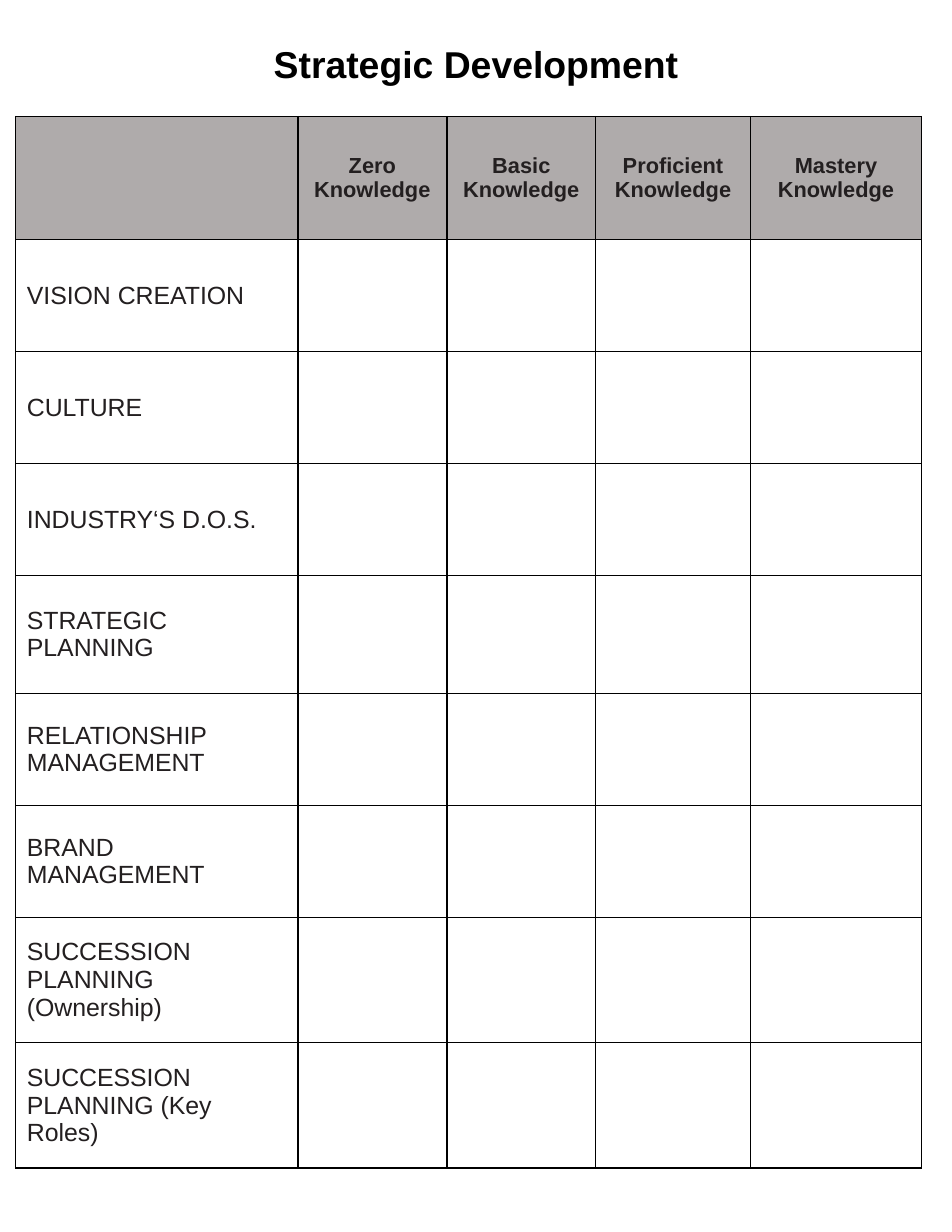
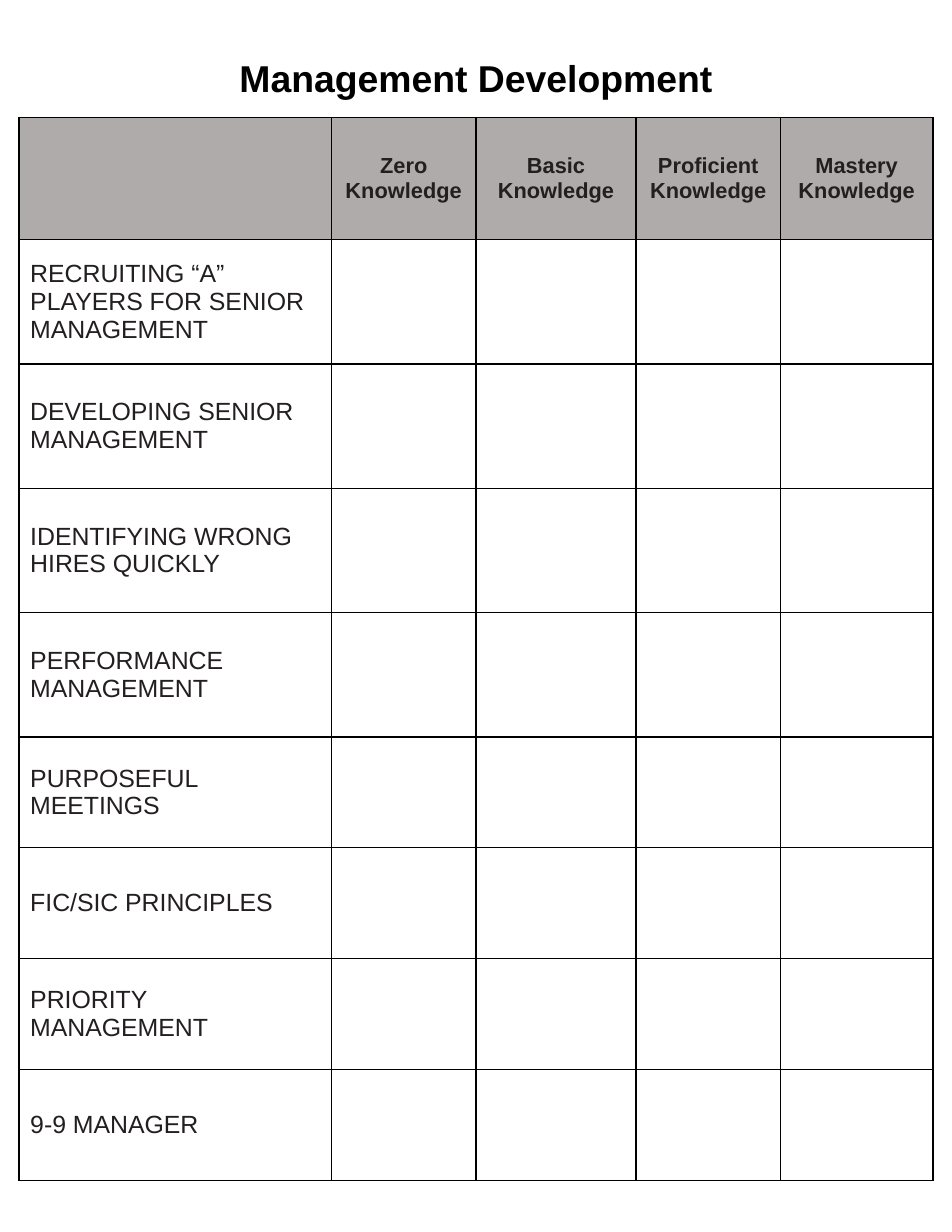
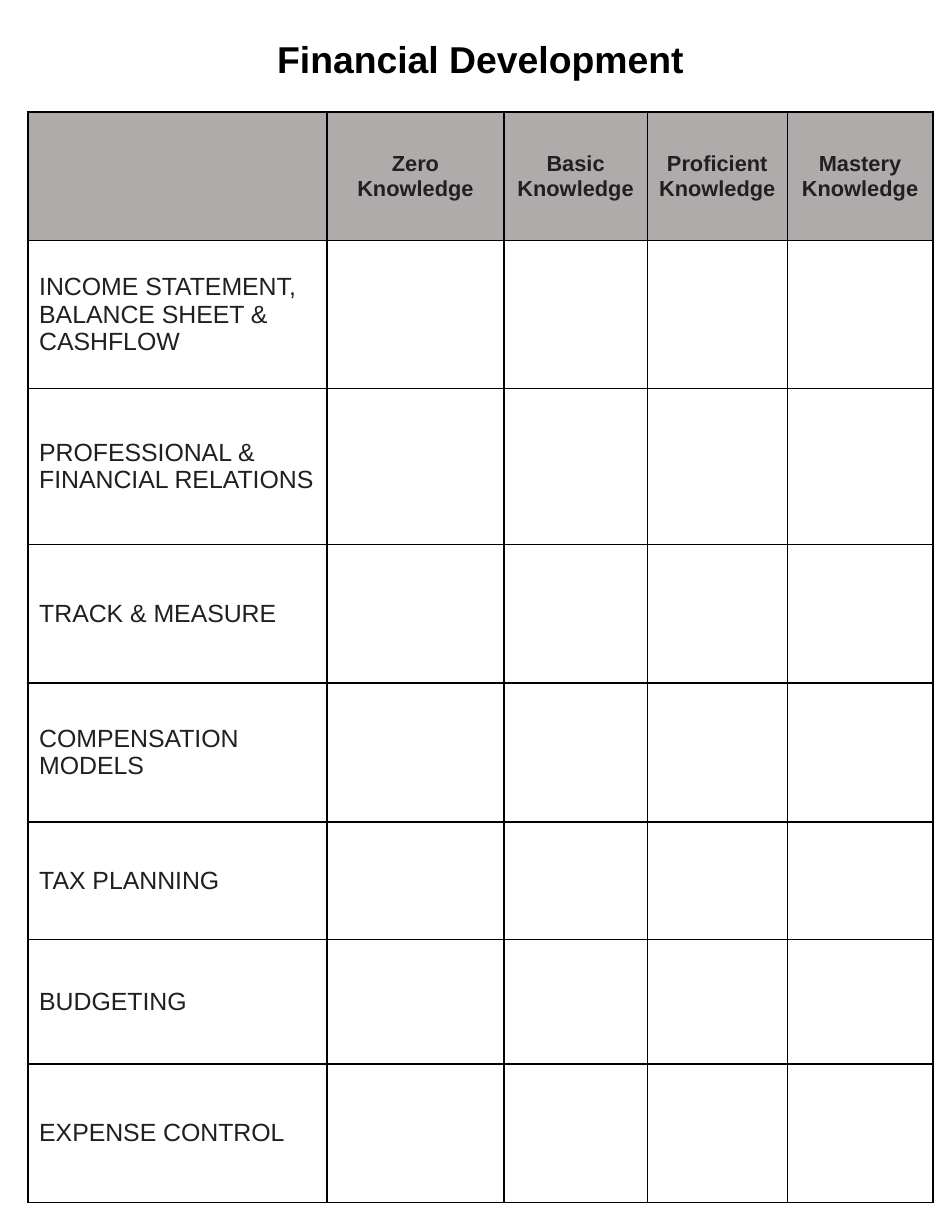
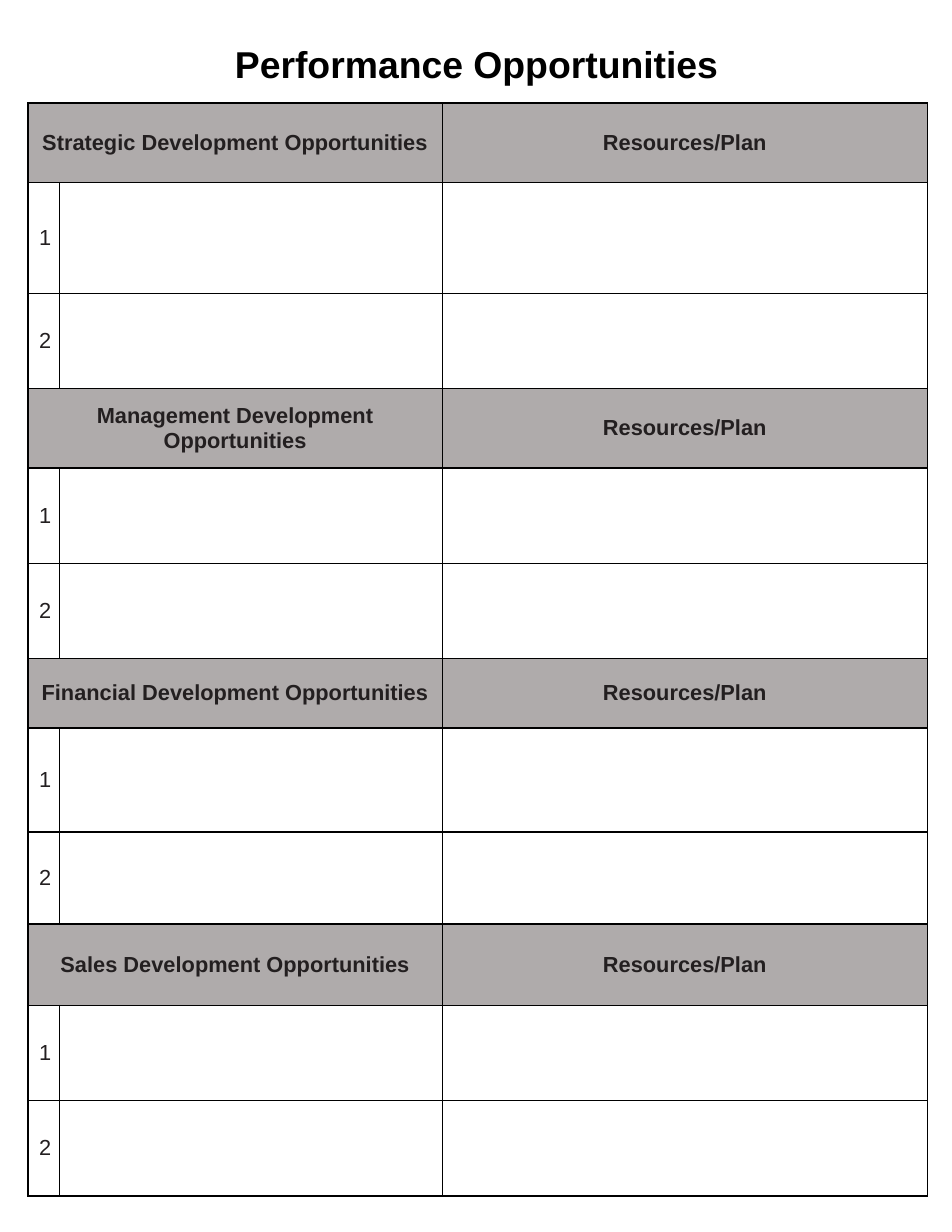
from dataclasses import dataclass

from lxml import etree
from pptx import Presentation
from pptx.dml.color import RGBColor
from pptx.enum.text import MSO_ANCHOR, MSO_AUTO_SIZE, PP_ALIGN
from pptx.oxml.ns import qn
from pptx.util import Inches, Pt

CENTER, LEFT = PP_ALIGN.CENTER, PP_ALIGN.LEFT
TOP, MIDDLE = MSO_ANCHOR.TOP, MSO_ANCHOR.MIDDLE
FIT_SHAPE = MSO_AUTO_SIZE.SHAPE_TO_FIT_TEXT
TITLE_ONLY = 5


@dataclass(frozen=True)
class Theme:
    font: str = "Arial"
    title_color: str = "000000"
    text_color: str = "231F20"
    band_color: str = "AFABAB"
    band_alpha: int = 50
    border_color: str = "000000"
    border_pt: float = 1
    title_size: int = 24
    label_size: int = 16
    small_size: int = 14
    space_before: int = 20


THEME = Theme()
LEVELS = ["Zero", "Basic", "Proficient", "Mastery"]
AREAS = ["Strategic", "Management", "Financial", "Sales"]

ASSESSMENTS = [
    {
        "title": "Strategic Development",
        "title_box": (2.04, 0.32, 4.42),
        "corner": (0.14, 1.04),
        "cols": [2.52, 1.33, 1.33, 1.38, 1.53],
        "rows": [1.1, 1, 1, 1, 1.05, 1, 1, 1.12, 1.12],
        "skills": [
            "VISION CREATION",
            "CULTURE",
            "INDUSTRY‘S D.O.S.",
            "STRATEGIC PLANNING",
            "RELATIONSHIP MANAGEMENT",
            "BRAND MANAGEMENT",
            "SUCCESSION PLANNING (Ownership)",
            "SUCCESSION PLANNING (Key Roles)",
        ],
    },
    {
        "title": "Management Development",
        "title_box": (1.98, 0.44, 4.54),
        "corner": (0.17, 1.05),
        "cols": [2.79, 1.29, 1.43, 1.29, 1.36],
        "rows": [1.09] + [1.11] * 4 + [0.99] * 4,
        "skills": [
            "RECRUITING “A” PLAYERS FOR SENIOR MANAGEMENT",
            "DEVELOPING SENIOR MANAGEMENT",
            "IDENTIFYING WRONG HIRES QUICKLY",
            "PERFORMANCE MANAGEMENT",
            "PURPOSEFUL MEETINGS",
            "FIC/SIC PRINCIPLES",
            "PRIORITY MANAGEMENT",
            "9-9 MANAGER",
        ],
    },
    {
        "title": "Financial Development",
        "title_box": (2.08, 0.27, 4.42),
        "corner": (0.25, 1),
        "cols": [2.67, 1.58, 1.28, 1.25, 1.3],
        "rows": [1.15, 1.32, 1.39, 1.24, 1.24, 1.05, 1.11, 1.24],
        "skills": [
            "INCOME STATEMENT, BALANCE SHEET & CASHFLOW",
            "PROFESSIONAL & FINANCIAL RELATIONS",
            "TRACK & MEASURE",
            "COMPENSATION MODELS",
            "TAX PLANNING",
            "BUDGETING",
            "EXPENSE CONTROL",
        ],
    },
]


def style_runs(p, size, color, bold):
    for r in p.runs:
        r.font.name = THEME.font
        r.font.size = Pt(size)
        r.font.bold = bold
        r.font.color.rgb = RGBColor.from_string(color)


def add_titled_slide(prs, title, box):
    slide = prs.slides.add_slide(prs.slide_layouts[TITLE_ONLY])
    sp = slide.shapes.title
    sp.left, sp.top, sp.width = (Inches(v) for v in box)
    sp.height = Inches(0.5)
    tf = sp.text_frame
    tf.text = title
    tf.word_wrap = True
    tf.auto_size = FIT_SHAPE
    tf.vertical_anchor = TOP
    p = tf.paragraphs[0]
    p.alignment = CENTER
    style_runs(p, THEME.title_size, THEME.title_color, True)
    return slide


def set_borders(cell):
    tc_pr = cell._tc.get_or_add_tcPr()
    for i, side in enumerate(("lnL", "lnR", "lnT", "lnB")):
        ln = etree.Element(qn(f"a:{side}"), w=str(Pt(THEME.border_pt)))
        fill = etree.SubElement(ln, qn("a:solidFill"))
        etree.SubElement(fill, qn("a:srgbClr"), val=THEME.border_color)
        tc_pr.insert(i, ln)


def shade(cell):
    cell.fill.solid()
    cell.fill.fore_color.rgb = RGBColor.from_string(THEME.band_color)
    color = cell._tc.tcPr.find(".//" + qn("a:srgbClr"))
    etree.SubElement(color, qn("a:alpha"), val=str(THEME.band_alpha * 1000))


def add_grid(slide, corner, cols, rows):
    left, top = corner
    frame = slide.shapes.add_table(
        len(rows), len(cols), Inches(left), Inches(top),
        Inches(sum(cols)), Inches(sum(rows)))
    table = frame.table
    table.first_row = table.horz_banding = False
    for col, width in zip(table.columns, cols):
        col.width = Inches(width)
    for row, height in zip(table.rows, rows):
        row.height = Inches(height)
    for cell in table.iter_cells():
        cell.fill.background()
        cell.vertical_anchor = MIDDLE
        set_borders(cell)
    return table


def write_cell(cell, text, size, bold=False, align=LEFT):
    cell.text_frame.text = text
    p = cell.text_frame.paragraphs[0]
    p.alignment = align
    spacing = etree.Element(qn("a:spcBef"))
    etree.SubElement(spacing, qn("a:spcPct"), val=str(THEME.space_before * 1000))
    p._p.get_or_add_pPr().insert(0, spacing)
    style_runs(p, size, THEME.text_color, bold)


def write_header(cell, text):
    shade(cell)
    write_cell(cell, text, THEME.small_size, True, CENTER)


def add_assessment(prs, title, title_box, corner, cols, rows, skills):
    slide = add_titled_slide(prs, title, title_box)
    table = add_grid(slide, corner, cols, rows)
    shade(table.cell(0, 0))
    for c, level in enumerate(LEVELS, 1):
        write_header(table.cell(0, c), f"{level} Knowledge")
    for r, skill in enumerate(skills, 1):
        write_cell(table.cell(r, 0), skill, THEME.label_size)


def add_opportunities(prs):
    slide = add_titled_slide(prs, "Performance Opportunities", (1.79, 0.32, 4.93))
    rows = [0.71, 0.99, 0.85, 0.71, 0.85, 0.85,
            0.62, 0.93, 0.82, 0.73, 0.85, 0.85]
    table = add_grid(slide, (0.25, 0.92), [0.28, 3.42, 4.33], rows)
    for i, area in enumerate(AREAS):
        top = 3 * i
        table.cell(top, 0).merge(table.cell(top, 1))
        write_header(table.cell(top, 0), f"{area} Development Opportunities")
        write_header(table.cell(top, 2), "Resources/Plan")
        for n in (1, 2):
            write_cell(table.cell(top + n, 0), str(n), THEME.small_size)


def main():
    prs = Presentation()
    prs.slide_width, prs.slide_height = Inches(8.5), Inches(11)
    for assessment in ASSESSMENTS:
        add_assessment(prs, **assessment)
    add_opportunities(prs)
    prs.save("out.pptx")


if __name__ == "__main__":
    main()
